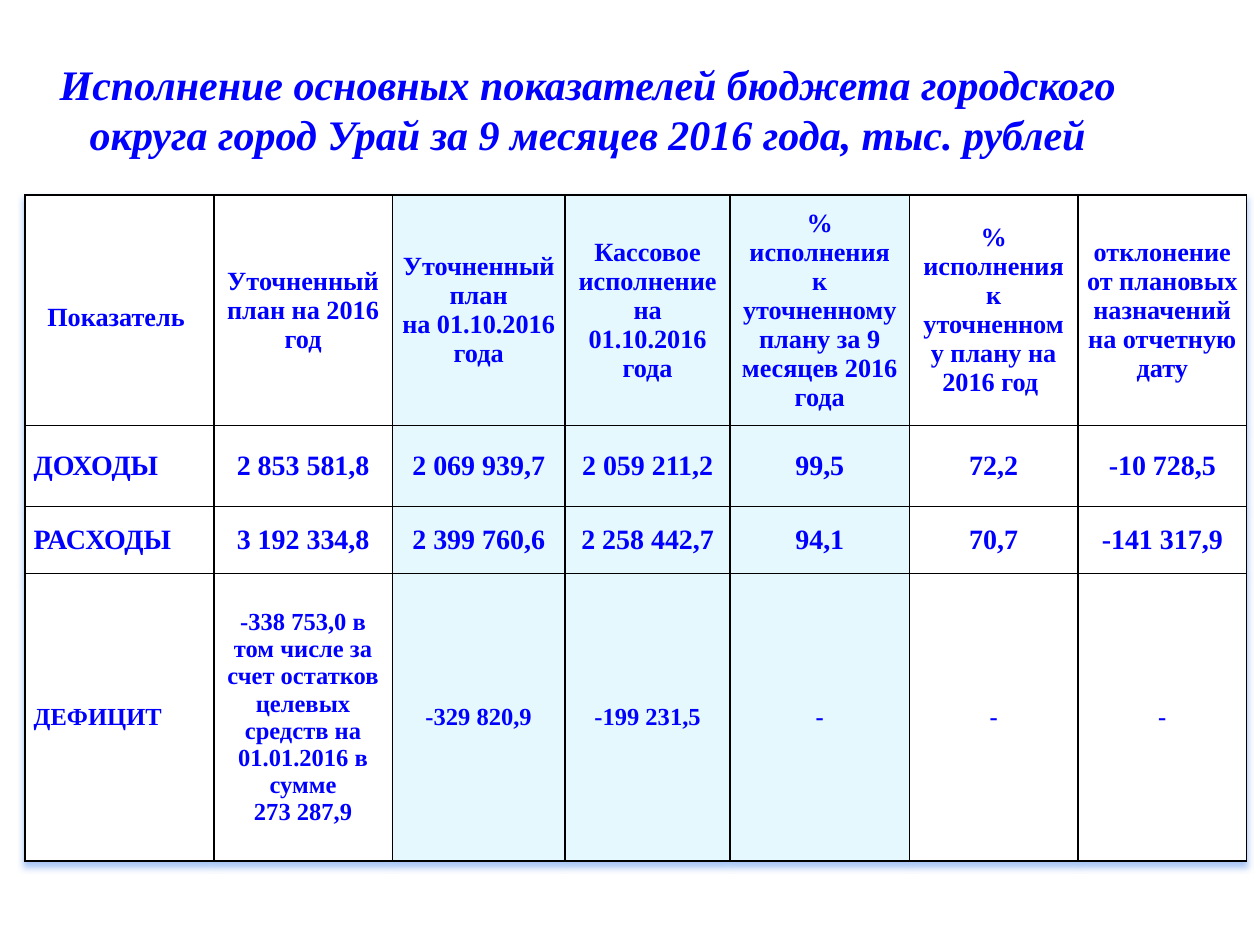
"""Build the slide on city budget execution for nine months of 2016."""
import lxml.etree
import pptx
import pptx.dml.color
import pptx.enum.text
import pptx.oxml.ns
import pptx.util

Cm = pptx.util.Cm
Pt = pptx.util.Pt
CENTER = pptx.enum.text.PP_ALIGN.CENTER
LEFT = pptx.enum.text.PP_ALIGN.LEFT
COLORS = {"text": "0000FF", "plain": "FFFFFF", "period": "E4F8FD", "border": "000000", "shadow": "6FA0F0"}


def add_run(paragraph, text, size, italic=False):
    run = paragraph.add_run()
    run.text = text
    run.font.name = "Times New Roman"
    run.font.size = Pt(size)
    run.font.bold = True
    run.font.italic = italic
    run.font.color.rgb = pptx.dml.color.RGBColor.from_string(COLORS["text"])


def add_xml(parent, tag, **attributes):
    child = lxml.etree.SubElement(parent, pptx.oxml.ns.qn(tag))
    for key, value in attributes.items():
        child.set(key, str(value))
    return child


deck = pptx.Presentation()
deck.slide_width = Cm(25.4)
deck.slide_height = Cm(19.05)
slide = deck.slides.add_slide(deck.slide_layouts[6])

heading = slide.shapes.add_textbox(0, 0, Cm(23.7), Cm(3.33)).text_frame
heading.word_wrap = True
heading.vertical_anchor = pptx.enum.text.MSO_ANCHOR.BOTTOM
heading.paragraphs[0].alignment = CENTER
add_run(
    heading.paragraphs[0],
    "Исполнение основных показателей бюджета городского округа город Урай за 9 месяцев 2016 года, тыс. рублей",
    24,
    italic=True,
)

budget_rows = [
    [
        "Показатель ",
        "Уточненный план на 2016 год",
        "Уточненный план\nна 01.10.2016 года",
        "Кассовое исполнение на 01.10.2016 года",
        "% исполнения к уточненному плану за 9 месяцев 2016 года",
        "% исполнения к уточненному плану на 2016 год ",
        "отклонение от плановых назначений на отчетную дату",
    ],
    ["ДОХОДЫ", "2 853 581,8", "2 069 939,7", "2 059 211,2", "99,5", "72,2", "-10 728,5"],
    ["РАСХОДЫ", "3 192 334,8", "2 399 760,6", "2 258 442,7", "94,1", "70,7", "-141 317,9"],
    [
        "ДЕФИЦИТ",
        "-338 753,0 в том числе за счет остатков целевых средств на 01.01.2016 в сумме\n273 287,9",
        "-329 820,9",
        "-199 231,5",
        "-",
        "-",
        "-",
    ],
]
column_widths = [3.81, 3.6, 3.48, 3.33, 3.61, 3.4, 3.4]
row_heights = [4.65, 1.63, 1.35, 5.8]
row_sizes = [15, 16, 16, 14]
period_columns = (2, 3, 4)

budget = slide.shapes.add_table(
    len(row_heights), len(column_widths), Cm(0.5), Cm(3.93), Cm(sum(column_widths)), Cm(sum(row_heights))
).table
budget.first_row = False
budget.horz_banding = False
for column, width in zip(budget.columns, column_widths):
    column.width = Cm(width)
for row, height in zip(budget.rows, row_heights):
    row.height = Cm(height)

table_properties = budget._tbl.tblPr
effects = add_xml(table_properties, "a:effectLst")
table_properties.insert(0, effects)
glow = add_xml(effects, "a:outerShdw", blurRad=Cm(0.11), dist=Cm(0.1), dir=5400000, rotWithShape=0)
glow_color = add_xml(glow, "a:srgbClr", val=COLORS["shadow"])
add_xml(glow_color, "a:alpha", val=60000)

for row_index, (texts, size) in enumerate(zip(budget_rows, row_sizes)):
    for column_index, text in enumerate(texts):
        cell = budget.cell(row_index, column_index)
        cell.margin_left = cell.margin_right = Cm(0.18)
        cell.margin_top = cell.margin_bottom = 0
        cell.vertical_anchor = pptx.enum.text.MSO_ANCHOR.MIDDLE
        for side in ("L", "R", "T", "B"):
            border = add_xml(cell._tc.get_or_add_tcPr(), f"a:ln{side}", w=Pt(1))
            add_xml(add_xml(border, "a:solidFill"), "a:srgbClr", val=COLORS["border"])
        cell.fill.solid()
        shade = "period" if column_index in period_columns else "plain"
        cell.fill.fore_color.rgb = pptx.dml.color.RGBColor.from_string(COLORS[shade])
        for line_index, line in enumerate(text.split("\n")):
            frame = cell.text_frame
            paragraph = frame.add_paragraph() if line_index else frame.paragraphs[0]
            paragraph.alignment = LEFT if row_index and not column_index else CENTER
            add_run(paragraph, line, size)

budget.cell(0, 0).text_frame.paragraphs[0].line_spacing = 1.5

deck.save("out.pptx")
